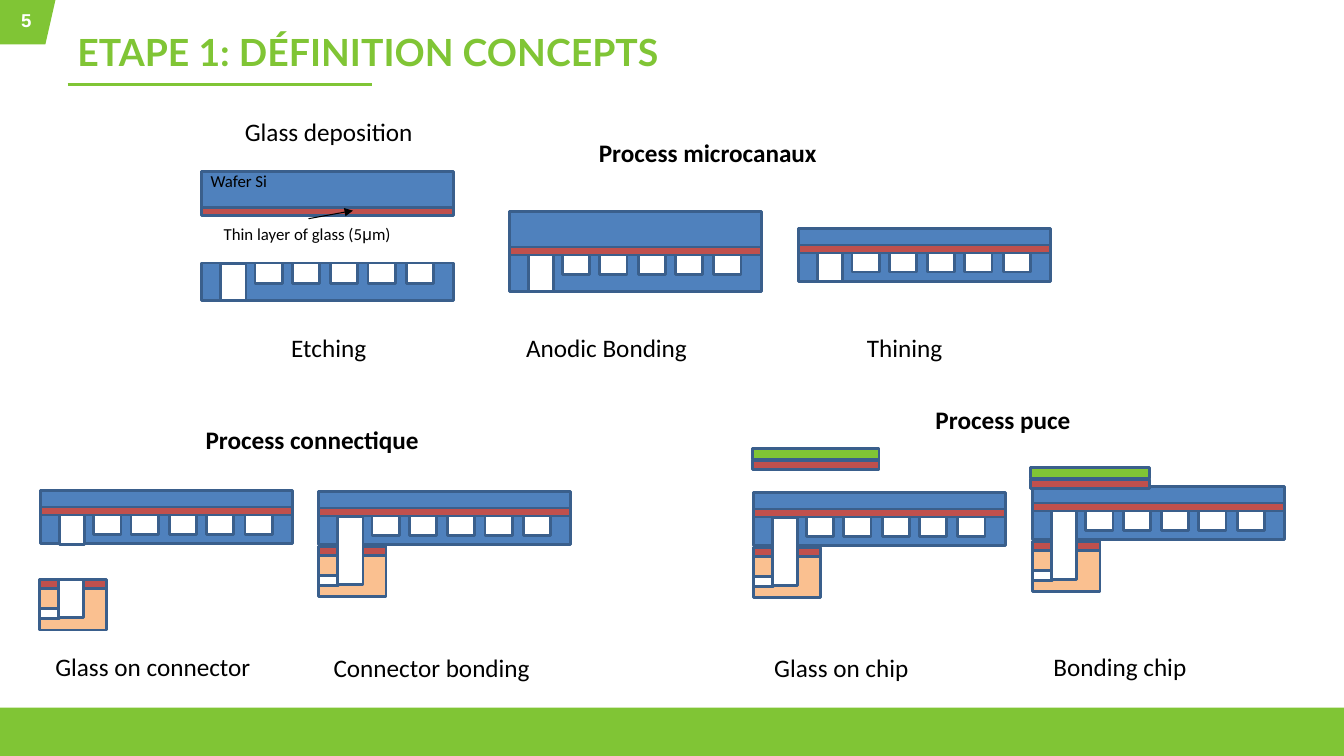
from lxml import etree
from pptx import Presentation
from pptx.dml.color import RGBColor
from pptx.enum.shapes import MSO_CONNECTOR, MSO_SHAPE
from pptx.enum.text import MSO_ANCHOR, MSO_AUTO_SIZE, PP_ALIGN
from pptx.oxml.ns import qn
from pptx.util import Pt

PX = 9144  # 100 px to the inch
RECT = MSO_SHAPE.RECTANGLE
STRAIGHT = MSO_CONNECTOR.STRAIGHT
MIDDLE = MSO_ANCHOR.MIDDLE
GROW = MSO_AUTO_SIZE.SHAPE_TO_FIT_TEXT
LEFT, CENTER = PP_ALIGN.LEFT, PP_ALIGN.CENTER

GREEN, WHITE, BLACK = "80C535", "FFFFFF", "000000"
SILICON, GLASS, CONNECTOR, OUTLINE = "4F81BD", "C0504D", "FAC090", "3A5F8C"
WAFER_W = 250
THIN = 17

CAPTIONS = [
    ("Glass deposition", 233, 110, 188),
    ("Etching", 279, 325, 95),
    ("Anodic Bonding", 512, 325, 182),
    ("Thining", 850, 325, 96),
    ("Glass on connector", 45, 641, 216),
    ("Connector bonding", 321, 642, 217),
    ("Glass on chip", 758, 642, 155),
    ("Bonding chip", 1035, 641, 153),
]
HEADINGS = [
    ("Process microcanaux", 584, 131, 238),
    ("Process connectique", 194, 416, 233),
    ("Process puce", 918, 396, 155),
]


def px(*values):
    return [v * PX for v in values]


def paint(color_format, color):
    color_format.rgb = RGBColor.from_string(color)


def fill_shape(sp, color, line=None):
    sp.shadow.inherit = False
    sp.fill.solid()
    paint(sp.fill.fore_color, color)
    if line:
        paint(sp.line.color, line)
        sp.line.width = Pt(2)
    else:
        sp.line.fill.background()


def block(slide, x, y, w, h, color, line=OUTLINE):
    sp = slide.shapes.add_shape(RECT, *px(x, y, w, h))
    fill_shape(sp, color, line)


def line(slide, x1, y1, x2, y2, color, width, arrow=False):
    cn = slide.shapes.add_connector(STRAIGHT, *px(x1, y1, x2, y2))
    paint(cn.line.color, color)
    cn.line.width = Pt(width)
    if arrow:
        etree.SubElement(cn.line._get_or_add_ln(), qn("a:tailEnd"), type="triangle")
    etree.SubElement(cn._element.spPr, qn("a:effectLst"))


def label(slide, text, x, y, w, h=40, size=18, font="Calibri", color=BLACK,
          bold=False, align=LEFT):
    """One line of text; text is a string or a list of (string, font) runs."""
    tf = slide.shapes.add_textbox(*px(x, y, w, h)).text_frame
    tf.word_wrap = False
    tf.auto_size = GROW
    p = tf.paragraphs[0]
    p.alignment = align
    for part, face in [(text, font)] if isinstance(text, str) else text:
        r = p.add_run()
        r.text = part
        r.font.name = face
        r.font.size = Pt(size)
        r.font.bold = bold
        paint(r.font.color, color)
    return tf


def etched_wafer(slide, x, y, h, inlet_h):
    """Silicon base with one deep inlet and five shallow channels."""
    block(slide, x, y, WAFER_W, h, SILICON)
    block(slide, x + 19, y + 1, 25, inlet_h, WHITE)
    for i in range(5):
        block(slide, x + 53 + i * 75 // 2, y, 27, 20, WHITE)


def glass_wafer(slide, x, glass_y, h):
    """Silicon cover with a thin glass layer below it."""
    block(slide, x, glass_y + 1 - h, WAFER_W, h, SILICON)
    block(slide, x, glass_y, WAFER_W, 8, GLASS)


def bonded_wafers(slide, x, y, h, inlet_h, cover_h=THIN):
    etched_wafer(slide, x, y, h, inlet_h)
    glass_wafer(slide, x, y - 7, cover_h)


def connector_block(slide, x, y):
    block(slide, x, y, 67, 41, CONNECTOR)
    block(slide, x, y + 20, 20, 10, WHITE)
    block(slide, x, y - 9, 67, 9, GLASS)


def connected_wafers(slide, x, y):
    connector_block(slide, x, y + 40)
    bonded_wafers(slide, x, y, 29, 68)


def chip(slide, x, y, w):
    block(slide, x, y, w, 11, GREEN)
    block(slide, x, y + 12, w, 9, GLASS)


def frame(slide):
    """Page number tab, title with its rule, and footer band."""
    fb = slide.shapes.build_freeform(0, 0, scale=PX)
    fb.add_line_segments([(55, 0), (45, 44), (0, 44)])
    fill_shape(fb.convert_to_shape(), GREEN)
    label(slide, "5", 0, 4, 52, 33, 13.3, "Arial", WHITE, True, CENTER)
    block(slide, 0, 702, 1333, 48, GREEN, None)
    line(slide, 67, 84, 369, 84, GREEN, 2)
    tf = label(slide, "ETAPE 1: DÉFINITION CONCEPTS", 67, 17, 1200, 69,
               26.7, "Lato", GREEN, True)
    tf.auto_size = MSO_AUTO_SIZE.NONE
    tf.word_wrap = True
    tf.vertical_anchor = MIDDLE


def microchannel_process(slide):
    glass_wafer(slide, 200, 206, 37)
    etched_wafer(slide, 200, 261, 37, 36)
    line(slide, 306, 217, 350, 209, BLACK, 0.75, arrow=True)
    label(slide, "Wafer Si", 199, 164, 77, 30, 12)
    label(slide, [("Thin layer of glass (5", "Calibri"), ("μ", "Arial"), ("m)", "Calibri")],
          212, 217, 187, 30, 12)
    bonded_wafers(slide, 505, 252, 37, 36, cover_h=36)
    bonded_wafers(slide, 792, 250, 29, 28)


def connector_process(slide):
    bonded_wafers(slide, 40, 510, 29, 29)
    connector_block(slide, 39, 584)
    block(slide, 58, 575, 25, 38, WHITE)
    connected_wafers(slide, 316, 511)


def chip_process(slide):
    connected_wafers(slide, 747, 512)
    chip(slide, 746, 445, 126)
    connected_wafers(slide, 1024, 506)
    chip(slide, 1022, 464, 118)


def main():
    prs = Presentation()
    prs.slide_width, prs.slide_height = px(1333, 750)
    slide = prs.slides.add_slide(prs.slide_layouts[6])
    frame(slide)
    microchannel_process(slide)
    connector_process(slide)
    chip_process(slide)
    for text, x, y, w in CAPTIONS:
        label(slide, text, x, y, w)
    for text, x, y, w in HEADINGS:
        label(slide, text, x, y, w, bold=True)
    prs.save("out.pptx")


if __name__ == "__main__":
    main()
